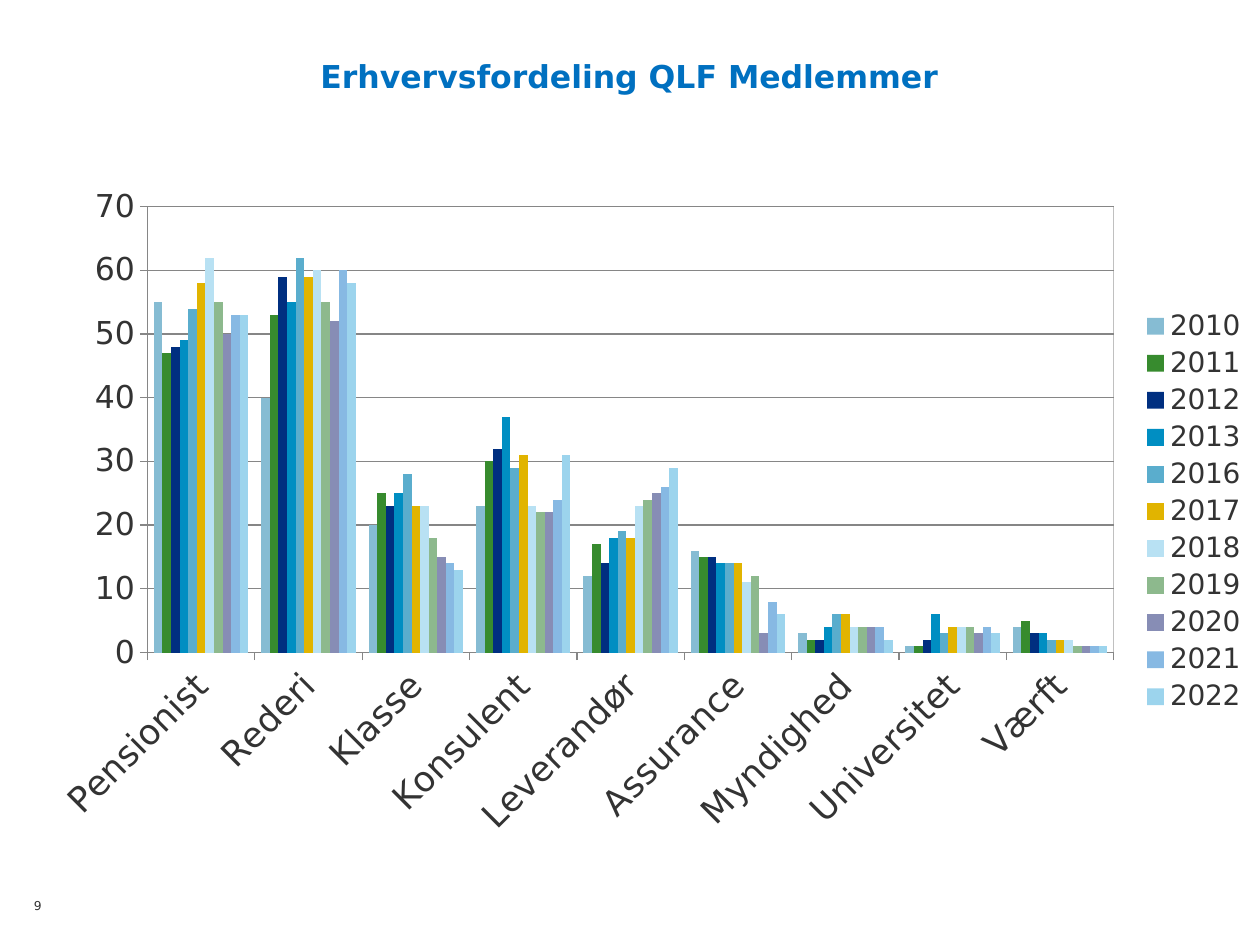
from lxml.etree import SubElement
from pptx import Presentation
from pptx.chart.data import CategoryChartData
from pptx.dml.color import RGBColor
from pptx.enum.chart import XL_CHART_TYPE, XL_LEGEND_POSITION, XL_TICK_MARK
from pptx.enum.text import MSO_ANCHOR, PP_ALIGN
from pptx.oxml import parse_xml
from pptx.oxml.ns import nsdecls, qn
from pptx.util import Inches, Pt

FONT = "DejaVu Sans"
BLUE = RGBColor(0x00, 0x70, 0xC0)
TEXT = RGBColor(0x33, 0x33, 0x33)
GRID = RGBColor(0x86, 0x86, 0x86)
FRAME = RGBColor(0xC0, 0xC0, 0xC0)

CHART_W, CHART_H = 9.73, 5.35  # inches

CATEGORIES = ["Pensionist", "Rederi", "Klasse", "Konsulent", "Leverandør",
              "Assurance", "Myndighed", "Universitet", "Værft"]

# Year, fill colour, members per category
SERIES = [
    ("2010", RGBColor(0x86, 0xBC, 0xD3), [55, 40, 20, 23, 12, 16, 3, 1, 4]),
    ("2011", RGBColor(0x37, 0x8B, 0x2E), [47, 53, 25, 30, 17, 15, 2, 1, 5]),
    ("2012", RGBColor(0x00, 0x2F, 0x80), [48, 59, 23, 32, 14, 15, 2, 2, 3]),
    ("2013", RGBColor(0x00, 0x8E, 0xC2), [49, 55, 25, 37, 18, 14, 4, 6, 3]),
    ("2016", RGBColor(0x5A, 0xAD, 0xCD), [54, 62, 28, 29, 19, 14, 6, 3, 2]),
    ("2017", RGBColor(0xE1, 0xB4, 0x00), [58, 59, 23, 31, 18, 14, 6, 4, 2]),
    ("2018", RGBColor(0xB8, 0xE1, 0xF3), [62, 60, 23, 23, 23, 11, 4, 4, 2]),
    ("2019", RGBColor(0x8D, 0xB9, 0x8D), [55, 55, 18, 22, 24, 12, 4, 4, 1]),
    ("2020", RGBColor(0x87, 0x8D, 0xB5), [50, 52, 15, 22, 25, 3, 4, 3, 1]),
    ("2021", RGBColor(0x87, 0xB9, 0xE3), [53, 60, 14, 24, 26, 8, 4, 4, 1]),
    ("2022", RGBColor(0x9C, 0xD4, 0xED), [53, 58, 13, 31, 29, 6, 2, 3, 1]),
]


def set_font(font, color=TEXT, **fmt):
    for name, value in {"name": FONT, **fmt}.items():
        setattr(font, name, value)
    font.color.rgb = color


def fill_text(sp, text, align, anchor, color=TEXT, **fmt):
    tf = sp.text_frame
    frame = {"margin_left": 0, "margin_top": 0, "margin_right": 0,
             "margin_bottom": 0, "word_wrap": True, "vertical_anchor": anchor}
    for name, value in frame.items():
        setattr(tf, name, value)
    p = tf.paragraphs[0]
    p.alignment = align
    r = p.add_run()
    r.text = text
    set_font(r.font, color, **fmt)


def add_title(s, text):
    sp = s.shapes.title
    sp.left, sp.top = Inches(0.27), Inches(0.26)
    sp.width, sp.height = Inches(9.45), Inches(0.49)
    fill_text(sp, text, PP_ALIGN.CENTER, MSO_ANCHOR.BOTTOM, BLUE,
              size=Pt(18), bold=True)


def add_page_number(s, text):
    sp = s.shapes.add_textbox(Inches(0.27), Inches(7.13), Inches(0.26), Inches(0.2))
    fill_text(sp, text, PP_ALIGN.LEFT, MSO_ANCHOR.TOP, size=Pt(7))


def set_layout(parent, index, x, y, w, h, inner=False):
    """Place a chart part, given in inches from the chart's corner."""
    for old in parent.findall(qn("c:layout")):
        parent.remove(old)
    layout = parse_xml(f"<c:layout {nsdecls('c')}><c:manualLayout/></c:layout>")
    values = {"layoutTarget": "inner"} if inner else {}
    values.update(xMode="edge", yMode="edge", x=x / CHART_W, y=y / CHART_H,
                  w=w / CHART_W, h=h / CHART_H)
    for tag, value in values.items():
        SubElement(layout[0], qn(f"c:{tag}")).set("val", str(value))
    parent.insert(index, layout)


def style_axis(axis, size):
    axis.major_tick_mark = XL_TICK_MARK.OUTSIDE
    axis.minor_tick_mark = XL_TICK_MARK.NONE
    axis.format.line.color.rgb = GRID
    set_font(axis.tick_labels.font, size=Pt(size))


def add_member_chart(s):
    data = CategoryChartData()
    data.categories = CATEGORIES
    for year, _, values in SERIES:
        data.add_series(year, values)
    chart = s.shapes.add_chart(XL_CHART_TYPE.COLUMN_CLUSTERED, Inches(0.27),
                               Inches(1.39), Inches(CHART_W), Inches(CHART_H),
                               data).chart
    chart.has_title = False
    set_font(chart.font, size=Pt(10))

    # Columns
    plot = chart.plots[0]
    plot.gap_width, plot.overlap = 150, 0
    plot.vary_by_categories = False
    for series, (_, color, _) in zip(plot.series, SERIES):
        series.format.fill.solid()
        series.format.fill.fore_color.rgb = color

    # Axes, with slanted category labels
    style_axis(chart.category_axis, 20)
    chart.category_axis._element.find(qn("c:txPr")).find(qn("a:bodyPr")).set("rot", "-2700000")
    val_axis = chart.value_axis
    style_axis(val_axis, 18)
    val_axis.minimum_scale, val_axis.maximum_scale, val_axis.major_unit = 0, 70, 10
    val_axis.major_gridlines.format.line.color.rgb = GRID

    # Plot area with a thin frame
    area = chart._chartSpace.chart.plotArea
    set_layout(area, 0, 0.9, 0.25, 7.67, 3.54, inner=True)
    area.append(parse_xml(
        f'<c:spPr {nsdecls("c", "a")}><a:noFill/><a:ln w="6350"><a:solidFill>'
        f'<a:srgbClr val="{FRAME}"/></a:solidFill></a:ln></c:spPr>'))

    # Legend
    chart.has_legend = True
    legend = chart.legend
    legend.position = XL_LEGEND_POSITION.RIGHT
    legend.include_in_layout = False
    set_font(legend.font, size=Pt(16))
    set_layout(legend._element, 1, 8.72, 1.03, 0.97, 3.28)


def main():
    prs = Presentation()
    prs.slide_width, prs.slide_height = Inches(10), Inches(7.5)
    s = prs.slides.add_slide(prs.slide_layouts[5])
    add_title(s, "Erhvervsfordeling QLF Medlemmer")
    add_member_chart(s)
    add_page_number(s, "9")
    prs.save("out.pptx")


if __name__ == "__main__":
    main()
